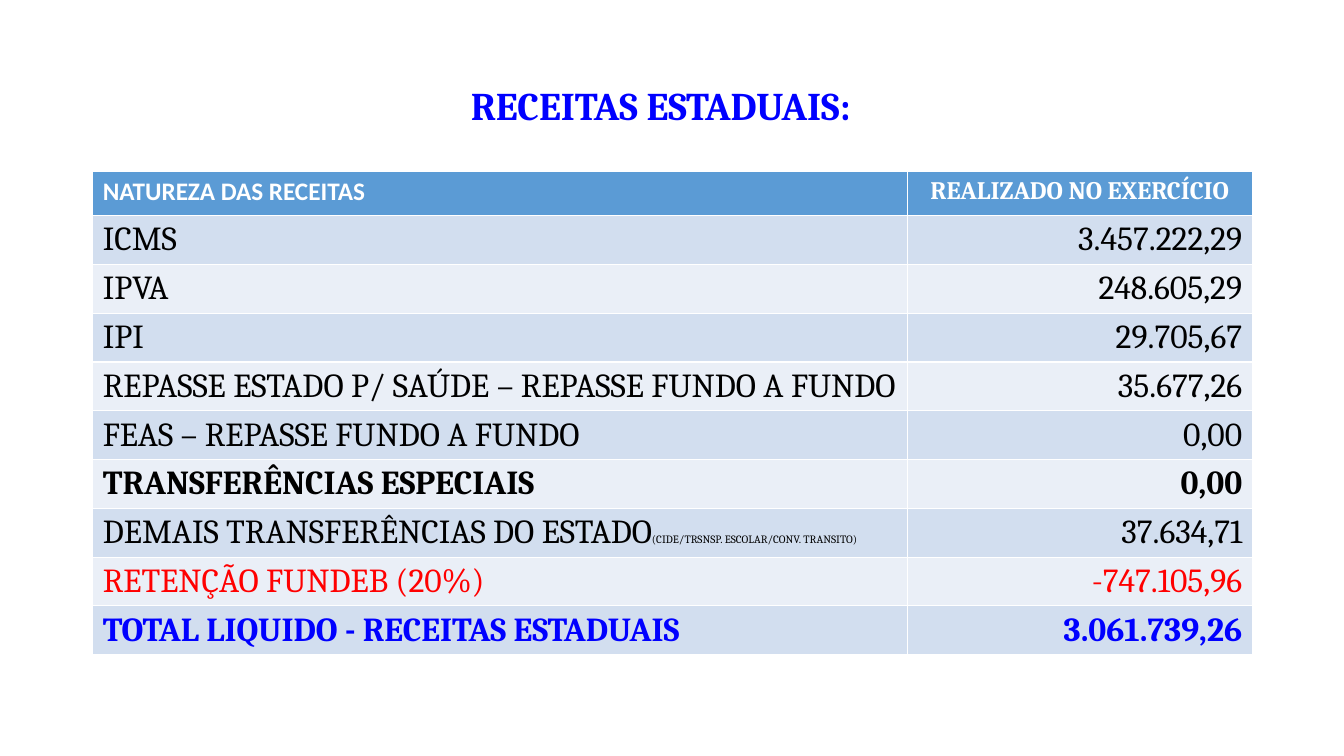
from dataclasses import dataclass

import pptx
import pptx.dml.color
import pptx.enum.text
import pptx.util

EMU_PER_PX = 9144
BLACK = "000000"
WHITE = "FFFFFF"
RED = "FF0000"
BLUE = "0000FF"
HEADER_FILL = "5B9BD5"
BAND_FILLS = ("D2DEEF", "EAEFF7")
ALIGN = pptx.enum.text.PP_ALIGN


@dataclass(frozen=True)
class Revenue:
    name: str
    amount: str
    color: str = BLACK
    bold: bool = False
    detail: str = ""


REVENUES = (
    Revenue("ICMS", "3.457.222,29"),
    Revenue("IPVA", "248.605,29"),
    Revenue("IPI", "29.705,67"),
    Revenue("REPASSE ESTADO P/ SAÚDE – REPASSE FUNDO A FUNDO", "35.677,26"),
    Revenue("FEAS – REPASSE FUNDO A FUNDO", "0,00"),
    Revenue("TRANSFERÊNCIAS ESPECIAIS", "0,00", bold=True),
    Revenue("DEMAIS TRANSFERÊNCIAS DO ESTADO", "37.634,71",
            detail="(CIDE/TRSNSP. ESCOLAR/CONV. TRANSITO)"),
    Revenue("RETENÇÃO FUNDEB (20%)", "-747.105,96", color=RED),
    Revenue("TOTAL LIQUIDO - RECEITAS ESTADUAIS", "3.061.739,26", color=BLUE, bold=True),
)


def px(length: int) -> pptx.util.Emu:
    return pptx.util.Emu(length * EMU_PER_PX)


def rgb(color: str) -> pptx.dml.color.RGBColor:
    return pptx.dml.color.RGBColor.from_string(color)


def format_run(run, size: int, color: str, bold: bool = False, font: str = "Cambria") -> None:
    run.font.name = font
    run.font.size = pptx.util.Pt(size)
    run.font.bold = bold
    run.font.color.rgb = rgb(color)


def fill_cell(cell, text: str, fill: str, alignment: ALIGN, size: int, color: str,
              bold: bool, font: str = "Cambria"):
    cell.fill.solid()
    cell.fill.fore_color.rgb = rgb(fill)
    paragraph = cell.text_frame.paragraphs[0]
    paragraph.text = text
    paragraph.alignment = alignment
    format_run(paragraph.runs[0], size, color, bold, font)
    return paragraph


def add_title(slide) -> None:
    title = slide.shapes.title
    title.left, title.top, title.width, title.height = px(92), px(47), px(1150), px(105)
    title.text_frame.vertical_anchor = pptx.enum.text.MSO_ANCHOR.MIDDLE
    title.text_frame.auto_size = pptx.enum.text.MSO_AUTO_SIZE.NONE
    paragraph = title.text_frame.paragraphs[0]
    paragraph.text = "RECEITAS ESTADUAIS:"
    paragraph.alignment = ALIGN.CENTER
    paragraph.line_spacing = 0.9
    format_run(paragraph.runs[0], 28, BLUE, bold=True)
    tab = paragraph.add_run()
    tab.text = "\t"
    format_run(tab, 44, BLACK, font="Calibri")


def add_revenue_table(slide) -> None:
    row_count = len(REVENUES) + 1
    frame = slide.shapes.add_table(row_count, 2, px(92), px(170), px(1150), px(44 * row_count))
    table = frame.table
    for column, width in zip(table.columns, (808, 342)):
        column.width = px(width)

    fill_cell(table.cell(0, 0), "NATUREZA DAS RECEITAS", HEADER_FILL, ALIGN.LEFT,
              18, WHITE, True, "Calibri")
    fill_cell(table.cell(0, 1), "REALIZADO NO EXERCÍCIO", HEADER_FILL, ALIGN.CENTER,
              18, WHITE, True)

    for row, revenue in enumerate(REVENUES, start=1):
        fill = BAND_FILLS[(row - 1) % 2]
        name = fill_cell(table.cell(row, 0), revenue.name, fill, ALIGN.LEFT,
                         24, revenue.color, revenue.bold)
        fill_cell(table.cell(row, 1), revenue.amount, fill, ALIGN.RIGHT,
                  24, revenue.color, revenue.bold)
        if revenue.detail:
            detail = name.add_run()
            detail.text = revenue.detail
            format_run(detail, 8, revenue.color)


def main() -> None:
    presentation = pptx.Presentation()
    presentation.slide_width, presentation.slide_height = px(1333), px(750)
    slide = presentation.slides.add_slide(presentation.slide_layouts[5])
    add_title(slide)
    add_revenue_table(slide)
    presentation.save("out.pptx")


if __name__ == "__main__":
    main()
